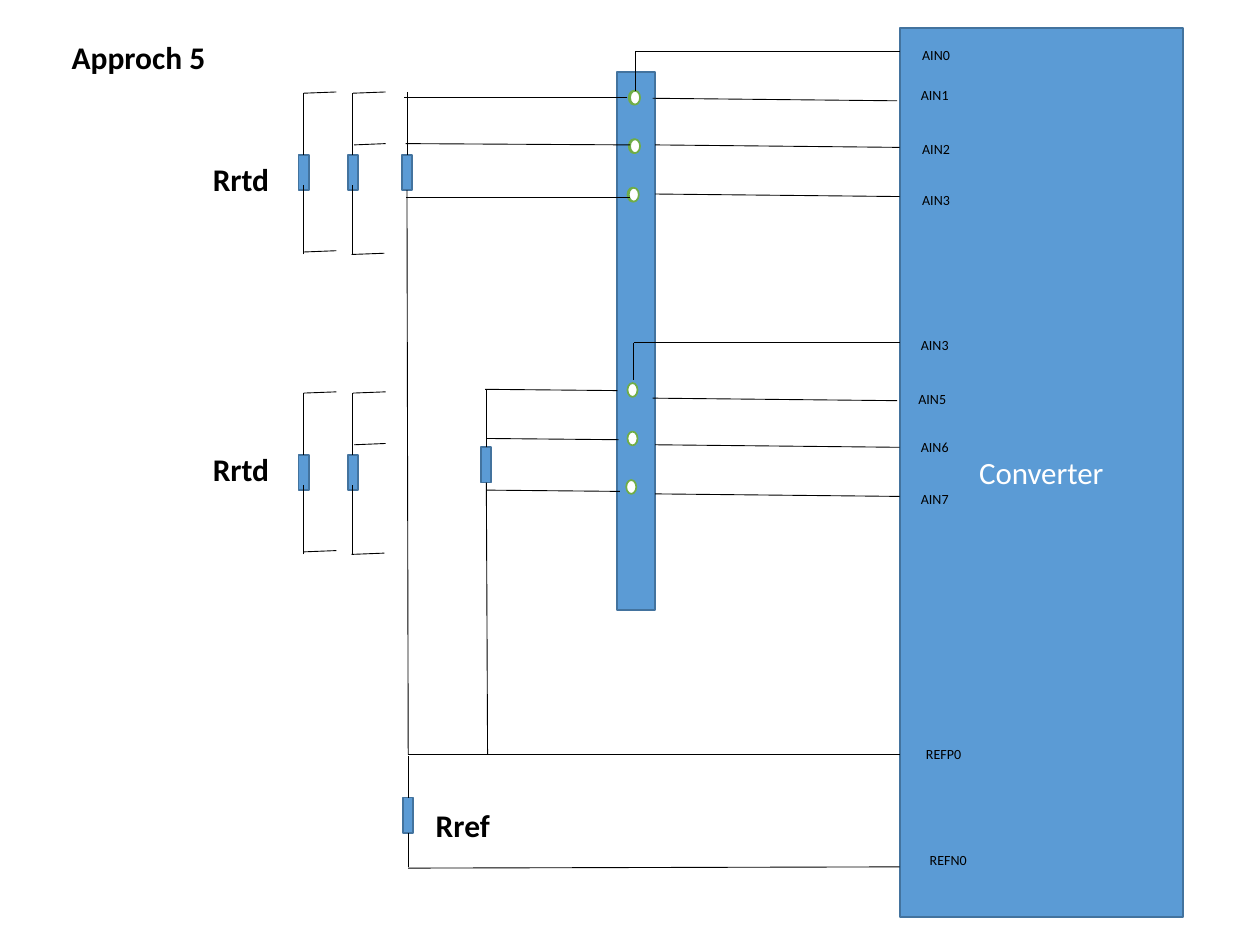
from typing import NamedTuple, Optional

import lxml.etree
import pptx
import pptx.dml.color
import pptx.enum.shapes
import pptx.enum.text
import pptx.oxml.ns
import pptx.util

Inches = pptx.util.Inches
KIND = pptx.enum.shapes.MSO_SHAPE
BLUE, EDGE, GREEN, WHITE, BLACK = "5B9BD5", "43739E", "70AD47", "FFFFFF", "000000"


class Box(NamedTuple):
    """A filled shape."""
    x: float
    y: float
    w: float
    h: float
    kind: int = KIND.RECTANGLE
    fill: str = BLUE
    edge: str = EDGE


class Wire(NamedTuple):
    """A thin line between two points."""
    x1: float
    y1: float
    x2: float
    y2: float


class Label(NamedTuple):
    """A line of text in a box."""
    text: str
    x: float
    y: float
    w: float = 0.62
    h: float = 0.23
    size: float = 8
    bold: bool = False


def color(code: str) -> pptx.dml.color.RGBColor:
    """Turn a hex string into a colour."""
    return pptx.dml.color.RGBColor.from_string(code)


def write(frame, text: str, size: float, code: str, bold: bool = False):
    """Add one run to the first paragraph and return the paragraph."""
    line = frame.paragraphs[0]
    run = line.add_run()
    run.text = text
    run.font.name = "Calibri"
    run.font.size = pptx.util.Pt(size)
    run.font.bold = bold
    run.font.color.rgb = color(code)
    return line


def draw_box(slide, box: Box):
    """Draw a filled shape."""
    shape = slide.shapes.add_shape(box.kind, *map(Inches, box[:4]))
    shape.shadow.inherit = False
    shape.fill.solid()
    shape.fill.fore_color.rgb = color(box.fill)
    shape.line.color.rgb = color(box.edge)
    shape.line.width = pptx.util.Pt(1)
    return shape


def draw_wire(slide, wire: Wire, part: Optional[object] = None, side: int = 0) -> None:
    """Draw a wire, joined at its start to a part when one is given."""
    line = slide.shapes.add_connector(
        pptx.enum.shapes.MSO_CONNECTOR.STRAIGHT, *map(Inches, wire))
    line.line.color.rgb = color(BLACK)
    line.line.width = pptx.util.Pt(0.5)
    lxml.etree.SubElement(line._element.spPr, pptx.oxml.ns.qn("a:effectLst"))
    if part is not None:
        line.begin_connect(part, side)


def draw_label(slide, label: Label) -> None:
    """Draw a text label."""
    area = slide.shapes.add_textbox(*map(Inches, label[1:5]))
    frame = area.text_frame
    frame.word_wrap = True
    frame.auto_size = pptx.enum.text.MSO_AUTO_SIZE.SHAPE_TO_FIT_TEXT
    write(frame, label.text, label.size, BLACK, label.bold)


def draw_part(slide, x: float, y: float):
    """Draw a resistor."""
    return draw_box(slide, Box(x, y, 0.08, 0.28))


def draw_pins(slide, x: float, y: float) -> None:
    """Draw a column of three terminal pins."""
    for row, shift in enumerate((0, 0, -0.01)):
        draw_box(slide, Box(x + shift, y + row * 0.385, 0.08, 0.11,
                            KIND.OVAL, WHITE, GREEN))


def draw_pair(slide, y: float) -> None:
    """Draw the three-wire and two-wire sensors of one channel."""
    three = draw_part(slide, 2.76, y + 0.5)
    two = draw_part(slide, 2.37, y + 0.5)
    for part, x in ((three, 2.8), (two, 2.41)):
        draw_wire(slide, Wire(x, y + 0.5, x, y + 0.01), part)
        draw_wire(slide, Wire(x, y + 0.01, x + 0.26, y))
        draw_wire(slide, Wire(x, y + 1.29, x, y + 0.74))
    draw_wire(slide, Wire(2.79, y + 1.29, 3.05, y + 1.28))
    draw_wire(slide, Wire(2.41, y + 1.27, 2.67, y + 1.26))
    draw_wire(slide, Wire(2.81, y + 0.42, 3.06, y + 0.41))


WIRES = (
    Wire(5.04, 0.41, 7.14, 0.41), Wire(5.04, 0.41, 5.04, 0.72),
    Wire(5.03, 2.72, 7.14, 2.72), Wire(5.03, 2.72, 5.03, 3.02),
    Wire(4.98, 0.77, 3.21, 0.77), Wire(5, 1.15, 3.22, 1.14),
    Wire(5, 1.57, 3.22, 1.57), Wire(4.9, 3.1, 3.85, 3.09),
    Wire(4.91, 3.49, 3.86, 3.48), Wire(4.92, 3.9, 3.86, 3.89),
    Wire(3.24, 5.99, 7.14, 5.99), Wire(3.24, 6.89, 7.14, 6.88),
)
LABELS = (
    Label("AIN0", 7.22, 0.32), Label("AIN1", 7.21, 0.64),
    Label("AIN2", 7.22, 1.07), Label("AIN3", 7.22, 1.47),
    Label("AIN3", 7.21, 2.62), Label("AIN5", 7.19, 3.05),
    Label("AIN6", 7.21, 3.43), Label("AIN7", 7.21, 3.84),
    Label("REFP0", 7.25, 5.87), Label("REFN0", 7.28, 6.71),
    Label("Rref", 3.36, 6.35, 0.84, 0.4, 18, True),
    Label("Rrtd", 1.59, 1.22, 0.78, 0.4, 18, True),
    Label("Rrtd", 1.59, 3.52, 0.78, 0.4, 18, True),
    Label("Approch 5", 0.47, 0.25, 2.37, 0.4, 18, True),
)


def main() -> None:
    """Build the wiring slide and save it."""
    deck = pptx.Presentation()
    deck.slide_width, deck.slide_height = Inches(10), Inches(7.5)
    slide = deck.slides.add_slide(deck.slide_layouts[6])

    chip = draw_box(slide, Box(7.14, 0.22, 2.25, 7.06))
    chip.text_frame.vertical_anchor = pptx.enum.text.MSO_ANCHOR.MIDDLE
    title = write(chip.text_frame, "Converter", 17.7, WHITE)
    title.alignment = pptx.enum.text.PP_ALIGN.CENTER
    draw_box(slide, Box(4.9, 0.57, 0.3, 4.27))
    for x, y in ((4.99, 0.72), (5, 0.72), (4.98, 3.04)):
        draw_pins(slide, x, y)

    for top in (0.78, 3.16):
        for x, y in ((5.18, top), (5.2, top + 0.37), (5.2, top + 0.76)):
            draw_wire(slide, Wire(x, y, x + 1.94, y + 0.02))
    for wire in WIRES:
        draw_wire(slide, wire)

    for x, y, high, low, foot in ((3.19, 1.23, 0.73, 5.99, 3.24),
                                  (3.82, 3.55, 3.09, 5.99, 3.87),
                                  (3.2, 6.33, 6, 6.88, 3.24)):
        part = draw_part(slide, x, y)
        draw_wire(slide, Wire(x + 0.04, y, x + 0.04, high), part)
        draw_wire(slide, Wire(x + 0.04, y + 0.28, foot, low), part, 2)
    for y in (0.73, 3.11):
        draw_pair(slide, y)
    for label in LABELS:
        draw_label(slide, label)
    deck.save("out.pptx")


if __name__ == "__main__":
    main()
